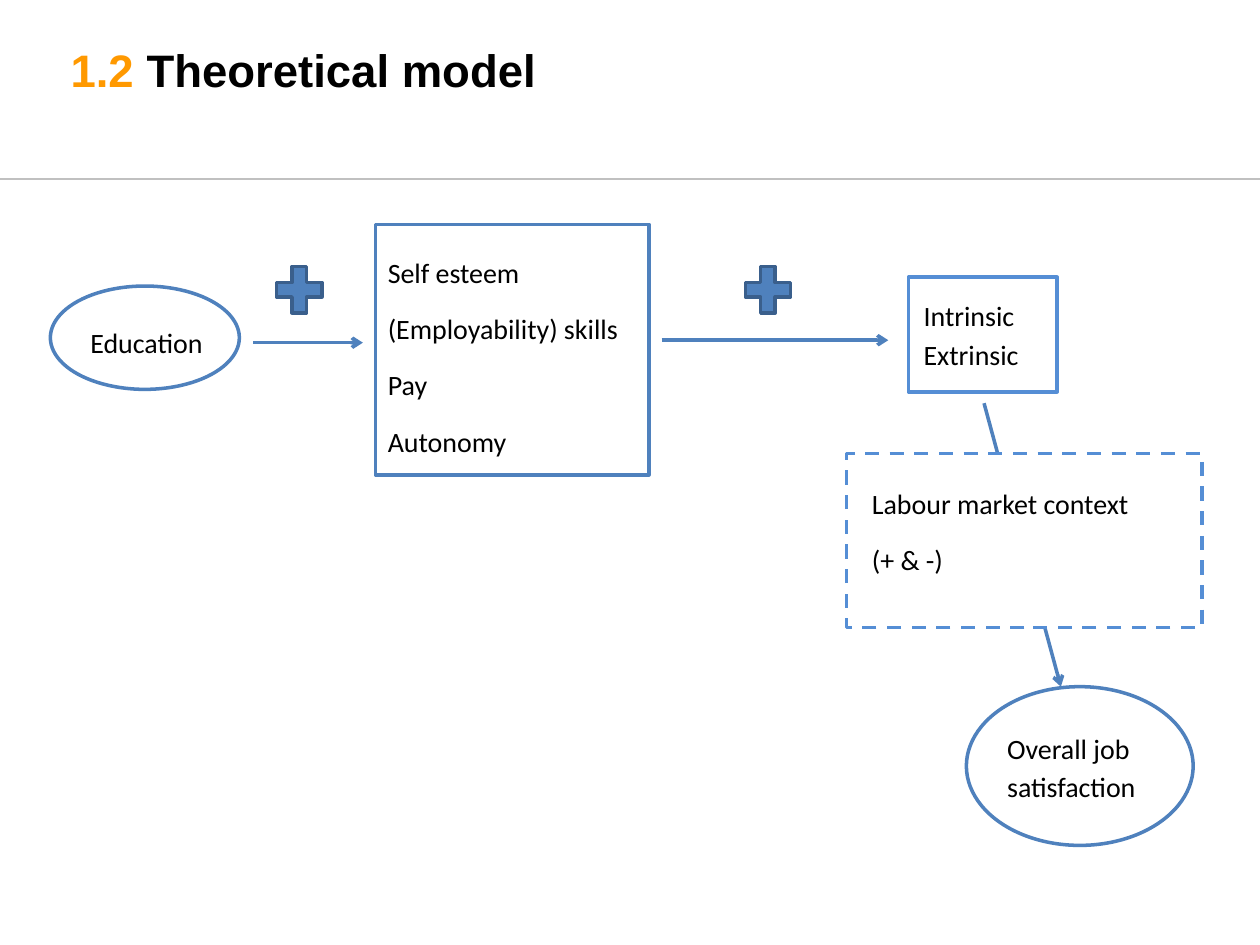
from lxml.etree import SubElement
from pptx import Presentation
from pptx.dml.color import RGBColor
from pptx.enum.dml import MSO_LINE
from pptx.enum.shapes import MSO_CONNECTOR, MSO_SHAPE
from pptx.enum.text import MSO_ANCHOR, PP_ALIGN
from pptx.oxml.ns import qn
from pptx.util import Inches, Pt

BLUE, LIGHT_BLUE, DARK_BLUE = "4F81BD", "558ED5", "3A5F8C"
BLACK, WHITE, ORANGE, GREY = "000000", "FFFFFF", "FF9900", "C0C0C0"


def color(value):
    """Turn a hex string into a colour."""
    return RGBColor.from_string(value)


def set_font(font, name, size, value, bold=False):
    """Format one font."""
    font.name, font.size, font.bold = name, Pt(size), bold
    font.color.rgb = color(value)


def set_margins(frame, left=0, top=0):
    """Give a text frame its left and top margins and no others."""
    frame.margin_left, frame.margin_top = Inches(left), Inches(top)
    frame.margin_right = frame.margin_bottom = 0
    frame.vertical_anchor = MSO_ANCHOR.TOP
    frame.word_wrap = True


def add_title(slide, box, number, text):
    """Place the title with its coloured section number."""
    title = slide.shapes.title
    title.left, title.top, title.width, title.height = map(Inches, box)
    set_margins(title.text_frame)
    paragraph = title.text_frame.paragraphs[0]
    paragraph.alignment = PP_ALIGN.LEFT
    for words, value in ((number + " ", ORANGE), (text, BLACK)):
        run = paragraph.add_run()
        run.text = words
        set_font(run.font, "Arial", 26, value, bold=True)


def add_line(slide, start, end, value=BLUE, width=2, arrow=True):
    """Draw a straight line, with an arrowhead at its end if wanted."""
    line = slide.shapes.add_connector(
        MSO_CONNECTOR.STRAIGHT, *map(Inches, (*start, *end)))
    line.line.color.rgb = color(value)
    line.line.width = Pt(width)
    if arrow:
        SubElement(line.line._get_or_add_ln(), qn("a:tailEnd"), type="arrow")
    SubElement(line._element.spPr, qn("a:effectLst"))


def add_outline(slide, kind, box, line_color, fill=None):
    """Place a preset shape with a two-point outline."""
    shape = slide.shapes.add_shape(kind, *map(Inches, box))
    shape.shadow.inherit = False
    shape.line.color.rgb = color(line_color)
    shape.line.width = Pt(2)
    if fill:
        shape.fill.solid()
        shape.fill.fore_color.rgb = color(fill)
    else:
        shape.fill.background()
    return shape


def add_node(slide, kind, box, margins, lines, line_color=BLUE, dashed=False):
    """Place one labelled element of the model."""
    shape = add_outline(slide, kind, box, line_color, WHITE)
    if dashed:
        shape.line.dash_style = MSO_LINE.DASH
    frame = shape.text_frame
    frame.text = "\n".join(lines)
    set_margins(frame, *margins)
    for paragraph in frame.paragraphs:
        paragraph.alignment = PP_ALIGN.LEFT
        paragraph.line_spacing = 1.15
        paragraph.space_after = Pt(10)
        for run in paragraph.runs:
            set_font(run.font, "Calibri", 16, BLACK)


def add_model(slide):
    """Place the arrows, plus signs and elements of the model."""
    rectangle, oval = MSO_SHAPE.RECTANGLE, MSO_SHAPE.OVAL
    for start, end in (((7.81, 3.2), (8.42, 5.45)),
                       ((2.01, 2.72), (2.88, 2.72)),
                       ((5.25, 2.7), (7.05, 2.7))):
        add_line(slide, start, end)
    for left in (2.13, 5.85):
        add_outline(slide, MSO_SHAPE.MATH_PLUS, (left, 2.05, 0.49, 0.5),
                    DARK_BLUE, BLUE)
    add_node(slide, oval, (0.4, 2.27, 1.5, 0.82), (0.1, 0.15), ["Education"])
    add_node(slide, rectangle, (2.98, 1.78, 2.17, 1.99), (0.1, 0.21),
             ["Self esteem", "(Employability) skills", "Pay", "Autonomy"])
    add_node(slide, rectangle, (7.21, 2.2, 1.18, 0.91), (0.12, 0.13),
             ["Intrinsic Extrinsic"], LIGHT_BLUE)
    add_node(slide, rectangle, (6.72, 3.6, 2.82, 1.38), (0.2, 0.22),
             ["Labour market context", "(+ & -)"], LIGHT_BLUE, dashed=True)
    add_node(slide, oval, (7.67, 5.45, 1.8, 1.26), (0.06, 0.13),
             ["Overall job satisfaction"])


def main():
    """Build and save the slide."""
    presentation = Presentation()
    presentation.slide_width, presentation.slide_height = Inches(10), Inches(7.5)
    slide = presentation.slides.add_slide(presentation.slide_layouts[5])
    add_line(slide, (0, 1.42), (10, 1.42), GREY, 1.38, arrow=False)
    add_title(slide, (0.56, 0.33, 6.52, 1.08), "1.2", "Theoretical model")
    add_model(slide)
    presentation.save("out.pptx")


if __name__ == "__main__":
    main()
